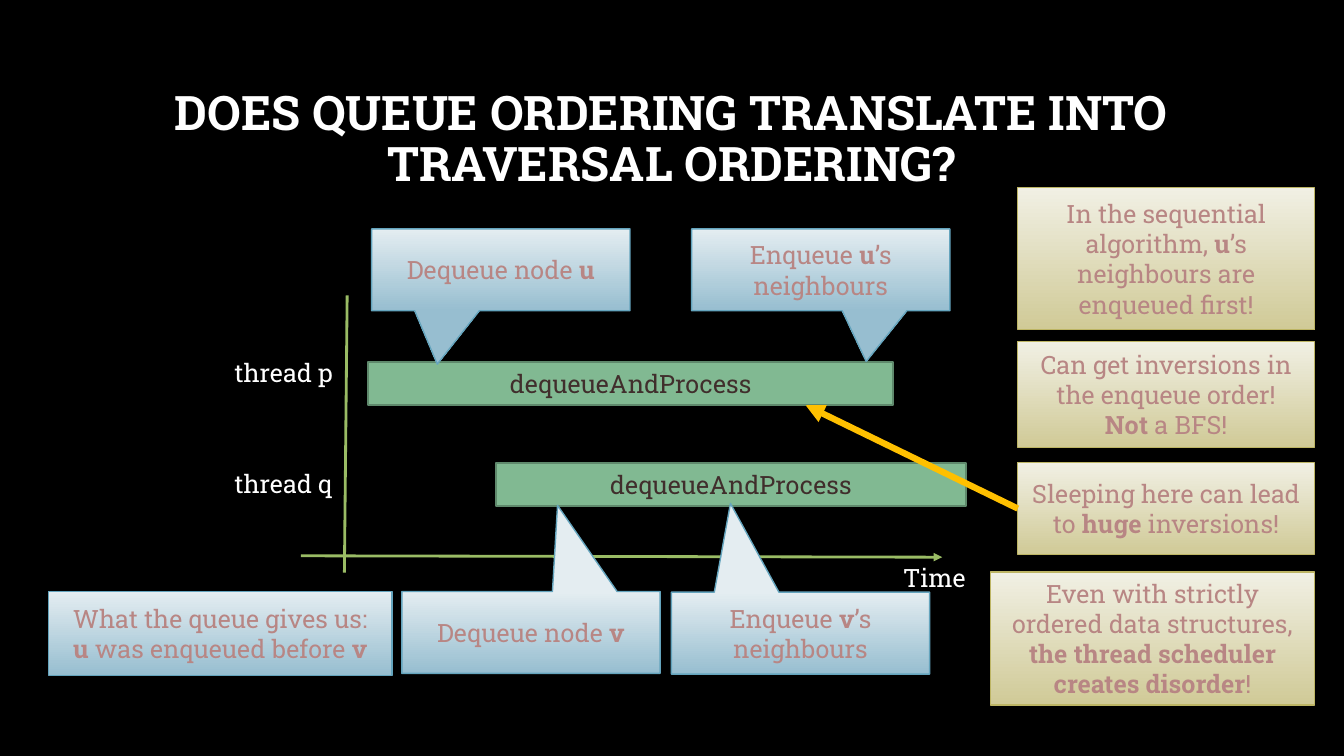
from dataclasses import dataclass

from lxml.etree import SubElement
from pptx import Presentation
from pptx.dml.color import RGBColor
from pptx.enum.shapes import MSO_CONNECTOR as Connector, MSO_SHAPE as Shape
from pptx.enum.text import MSO_ANCHOR as Anchor, PP_ALIGN as Align
from pptx.oxml.ns import qn
from pptx.util import Pt


@dataclass(frozen=True)
class Theme:
    font: str = "Roboto Slab"
    title_size: float = 34
    body_size: float = 18
    background: str = "000000"
    light: str = "FFFFFF"
    dark: str = "402E2C"
    muted: str = "B88684"
    axis: str = "9ABC65"
    arrow: str = "FFC000"
    bar: tuple = ("81B992",)
    bar_line: str = "5F896C"
    blue: tuple = ("E4EDF1", "97BED0")
    blue_line: str = "64A4BD"
    sand: tuple = ("F1F0E4", "D0CA97")
    sand_line: str = "BDB564"


THEME = Theme()


def rgb(value):
    return RGBColor.from_string(value)


def write_text(shape, *paragraphs, size=THEME.body_size, color=THEME.muted,
               align=Align.CENTER, anchor=Anchor.MIDDLE, wrap=True, bold=False,
               spacing=None):
    """Fill a shape; *stars* switch bold and a newline is a line break."""
    frame = shape.text_frame
    frame.word_wrap = wrap
    frame.vertical_anchor = anchor
    for index, text in enumerate(paragraphs):
        paragraph = frame.add_paragraph() if index else frame.paragraphs[0]
        paragraph.alignment = align
        paragraph.line_spacing = spacing
        for part_index, part in enumerate(text.split("*")):
            for line_index, line in enumerate(part.split("\n")):
                if line_index:
                    paragraph.add_line_break()
                if not line:
                    continue
                run = paragraph.add_run()
                run.text = line
                run.font.name = THEME.font
                run.font.size = Pt(size)
                run.font.bold = bold or part_index % 2 == 1
                run.font.color.rgb = rgb(color)


def add_label(slide, box, text, **text_format):
    label = slide.shapes.add_textbox(*map(Pt, box))
    write_text(label, text, **text_format)


def add_box(slide, box, *paragraphs, colors, line, line_width=1,
            kind=Shape.RECTANGLE, color=THEME.muted):
    shape = slide.shapes.add_shape(kind, *map(Pt, box))
    shape.shadow.inherit = False
    if len(colors) == 1:
        shape.fill.solid()
        shape.fill.fore_color.rgb = rgb(colors[0])
    else:
        shape.fill.gradient()
        shape.fill.gradient_angle = 270
        for position, (stop, value) in enumerate(zip(shape.fill.gradient_stops, colors)):
            stop.position = position
            stop.color.rgb = rgb(value)
    shape.line.color.rgb = rgb(line)
    shape.line.width = Pt(line_width)
    write_text(shape, *paragraphs, color=color)
    return shape


def add_line(slide, start, end, color, width, arrow=False):
    connector = slide.shapes.add_connector(
        Connector.STRAIGHT, *map(Pt, (*start, *end)))
    connector.line.color.rgb = rgb(color)
    connector.line.width = Pt(width)
    if arrow:
        SubElement(connector.line._get_or_add_ln(), qn("a:tailEnd"), type="triangle")
    SubElement(connector._element.spPr, qn("a:effectLst"))
    return connector


def add_title(slide, box):
    add_label(slide, box, "DOES QUEUE ORDERING TRANSLATE INTO TRAVERSAL ORDERING?",
              size=THEME.title_size, color=THEME.light, bold=True, spacing=0.9)


def add_timeline(slide, box):
    left, top, width, height = box
    label_format = dict(color=THEME.light, align=Align.LEFT,
                        anchor=Anchor.TOP, wrap=False)

    # Axes
    add_line(slide, (left + 55, top + 186), (left + 513, top + 187),
             THEME.axis, 2, arrow=True)
    add_line(slide, (left + 88, top), (left + 86, top + 198), THEME.axis, 2)
    add_label(slide, (left + width - 61, top + height - 29, 61, 29),
              "Time", **label_format)

    # One label and one bar for each thread
    threads = [("thread p", 103, 375), ("thread q", 194.4, 335.5)]
    for row, (name, bar_left, bar_width) in enumerate(threads):
        add_label(slide, (left + 0.5, top + 41 + 79 * row, 86, 29),
                  name, **label_format)
        add_box(slide, (left + bar_left, top + 47.5 + 72 * row, bar_width, 31),
                "dequeueAndProcess", colors=THEME.bar, line=THEME.bar_line,
                line_width=1.5, color=THEME.dark)


def add_callouts(slide, box):
    left, top, width, height = box
    blue = dict(colors=THEME.blue, line=THEME.blue_line)
    callout_width, callout_height = 184.5, 58.5
    lower = height - 60

    # Offset, text and pointer tip of each callout
    callouts = [
        (231, 0, "Dequeue node *u*", -0.246, 1.152),
        (252.5, lower, "Dequeue node *v*", 0.103, -1.551),
        (445, lower + 0.5, "Enqueue *v*’s neighbours", -0.271, -1.584),
        (459.5, 0, "Enqueue *u*’s neighbours", 0.176, 1.119),
    ]
    for x, y, text, tip_x, tip_y in callouts:
        callout = add_box(slide, (left + x, top + y, callout_width, callout_height),
                          text, kind=Shape.RECTANGULAR_CALLOUT, **blue)
        callout.adjustments[0] = tip_x
        callout.adjustments[1] = tip_y

    add_box(slide, (left, top + lower, 245.5, 60),
            "What the queue gives us:\n*u* was enqueued before *v*", **blue)


def add_notes_column(slide, box, arrow_tip):
    left, top, width, height = box
    right = left + width
    notes = [
        (0, 212, 101.5, ["In the sequential algorithm, *u*’s neighbours are enqueued first!"]),
        (110, 212, 75.5, ["Can get inversions in the enqueue order!", "*Not* a BFS!"]),
        (196.5, 212, 65.5, ["Sleeping here can lead to *huge* inversions!"]),
        (height - 95, width, 95, ["Even with strictly\nordered data structures,\n"
                                  "*the thread scheduler\ncreates disorder*!"]),
    ]
    shapes = [
        add_box(slide, (right - note_width, top + y, note_width, note_height),
                *paragraphs, colors=THEME.sand, line=THEME.sand_line)
        for y, note_width, note_height, paragraphs in notes
    ]

    # Arrow from the sleeping note to the first thread's bar
    arrow = add_line(slide, (right - 212, top + 229), arrow_tip,
                     THEME.arrow, 4.5, arrow=True)
    arrow.begin_connect(shapes[2], 1)


def main():
    presentation = Presentation()
    presentation.slide_width, presentation.slide_height = Pt(960), Pt(540)
    slide = presentation.slides.add_slide(presentation.slide_layouts[6])
    slide.background.fill.solid()
    slide.background.fill.fore_color.rgb = rgb(THEME.background)

    add_title(slide, (72, 48, 815, 104.5))
    add_timeline(slide, (160, 211, 539, 216))
    add_callouts(slide, (34.5, 163.5, 644, 319))
    add_notes_column(slide, (707.5, 134, 231.5, 369.5), arrow_tip=(575.5, 289.5))
    presentation.save("out.pptx")


if __name__ == "__main__":
    main()
